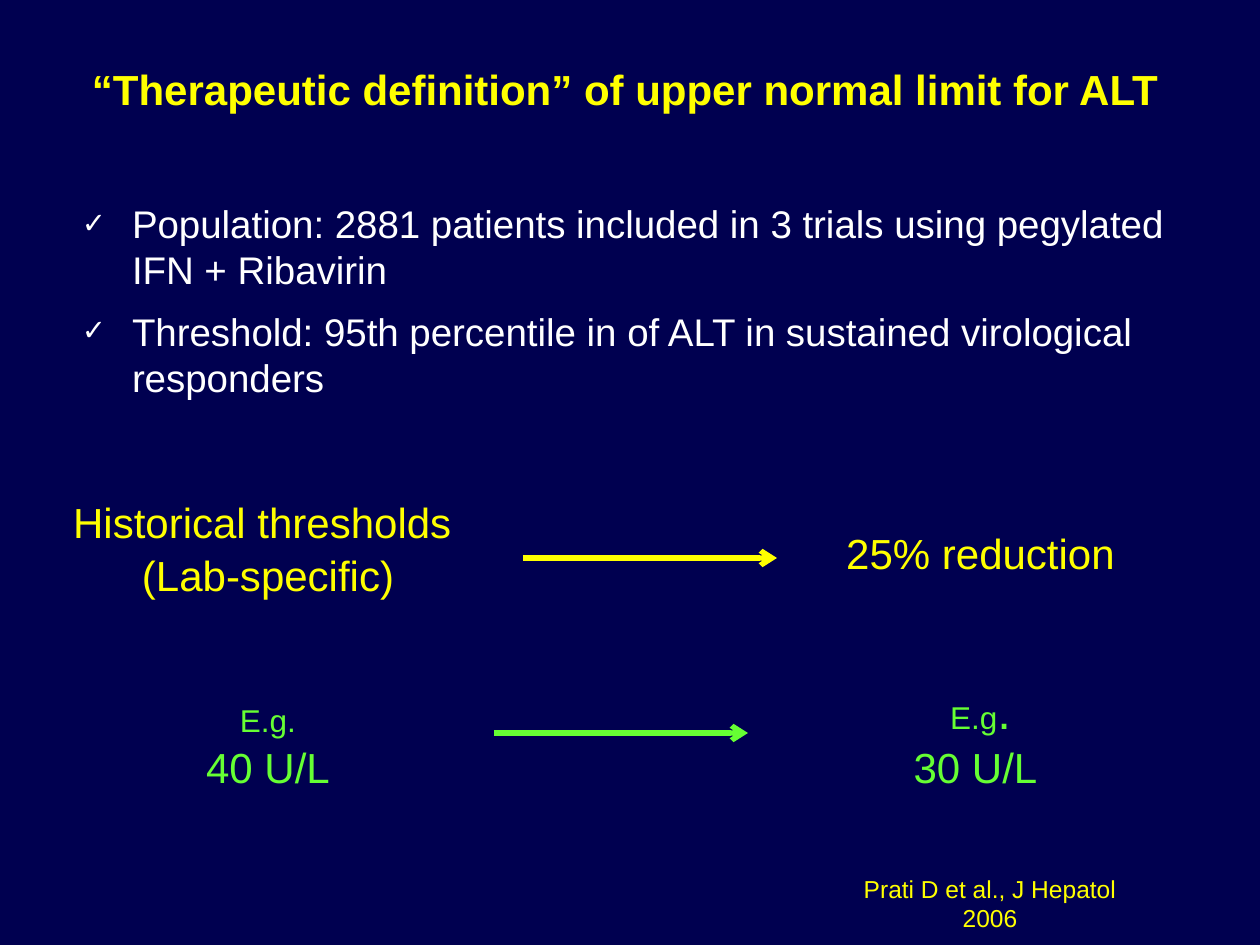
from pptx import Presentation
from pptx import util as u
from pptx.dml.color import RGBColor
from pptx.enum import shapes, text
from pptx.oxml.ns import qn
from lxml import etree

NAVY = RGBColor(0x00, 0x00, 0x50)
YELLOW = RGBColor(0xFF, 0xFF, 0x00)
GREEN = RGBColor(0x66, 0xFF, 0x33)
WHITE = RGBColor(0xFF, 0xFF, 0xFF)
CENTER = text.PP_ALIGN.CENTER
PX_PER_INCH = 126


def px(length):
    """Convert whole pixels to EMU."""
    return u.Emu(round(length * 914400 / PX_PER_INCH))


def place(shape, box):
    """Move a shape to a box of left, top, width and height."""
    shape.left, shape.top, shape.width, shape.height = map(px, box)


def prepare_frame(shape, side=13, anchor=text.MSO_ANCHOR.TOP):
    """Set wrapping, insets and anchor, and return the text frame."""
    frame = shape.text_frame
    frame.word_wrap = True
    frame.auto_size = text.MSO_AUTO_SIZE.NONE
    frame.vertical_anchor = anchor
    frame.margin_left = frame.margin_right = px(side)
    frame.margin_top = frame.margin_bottom = px(6)
    return frame


def add_run(paragraph, words, size, color, bold=False):
    """Append a formatted run."""
    run = paragraph.add_run()
    run.text = words
    font = run.font
    font.name, font.size, font.bold = "Arial", u.Pt(size), bold
    font.color.rgb = color


def write(frame, words, size=24, color=YELLOW, bold=False, align=CENTER,
          spacing=1.0, before=0, after=0):
    """Write one paragraph, filling the first empty one if there is one."""
    first = frame.paragraphs[0]
    paragraph = frame.add_paragraph() if first.runs else first
    paragraph.alignment = align
    paragraph.line_spacing = spacing
    paragraph.space_before, paragraph.space_after = u.Pt(before), u.Pt(after)
    add_run(paragraph, words, size, color, bold)
    return paragraph


def set_check_bullet(paragraph, indent):
    """Give a paragraph a hanging white check mark."""
    properties = paragraph._p.get_or_add_pPr()
    properties.set("marL", str(px(indent)))
    properties.set("indent", str(-px(indent)))
    color = etree.SubElement(properties, qn("a:buClr"))
    etree.SubElement(color, qn("a:srgbClr"), val=str(WHITE))
    etree.SubElement(properties, qn("a:buSzPct"), val="75000")
    etree.SubElement(properties, qn("a:buFont"), typeface="Arial")
    etree.SubElement(properties, qn("a:buChar"), char="✓")


def fill_title(slide, box):
    """Fill the title placeholder."""
    title = slide.shapes.title
    place(title, box)
    frame = prepare_frame(title, side=14, anchor=text.MSO_ANCHOR.MIDDLE)
    write(frame, "“Therapeutic definition” of upper normal limit for ALT ",
          bold=True, spacing=0.85)


def fill_study_points(slide, box):
    """Fill the body placeholder with the check list."""
    body = slide.placeholders[1]
    place(body, box)
    frame = prepare_frame(body, side=14)
    for point in (
        "Population: 2881 patients included in 3 trials using pegylated IFN + Ribavirin",
        "Threshold: 95th percentile in of ALT in sustained virological responders",
    ):
        paragraph = write(frame, point, size=22, color=WHITE,
                          align=text.PP_ALIGN.LEFT, before=4.4, after=4.4)
        set_check_bullet(paragraph, 50)


def add_threshold(slide, box, headings, dot, value):
    """Add a column of yellow headings above a green example."""
    frame = prepare_frame(slide.shapes.add_textbox(*map(px, box)))
    for heading in headings:
        write(frame, heading, spacing=1.05)
    example, dot_size = "E.g", 28 if dot == "large" else 18
    paragraph = write(frame, example, size=18, color=GREEN, spacing=1.05, before=57)
    add_run(paragraph, ".", dot_size, GREEN)
    write(frame, value, color=GREEN, spacing=1.05)


def add_arrow(slide, left, top, length, color):
    """Add a horizontal arrow pointing right."""
    arrow = slide.shapes.add_connector(
        shapes.MSO_CONNECTOR.STRAIGHT, px(left), px(top), px(left + length), px(top))
    arrow.line.color.rgb = color
    arrow.line.width = u.Pt(3)
    etree.SubElement(arrow.line._get_or_add_ln(), qn("a:tailEnd"), type="arrow")
    etree.SubElement(arrow._element.spPr, qn("a:effectLst"))


def add_citation(slide, box):
    """Add the reference at the foot of the slide."""
    frame = prepare_frame(slide.shapes.add_textbox(*map(px, box)))
    write(frame, "Prati D et al., J Hepatol 2006", size=14)


def main():
    """Build and save the slide."""
    presentation = Presentation()
    presentation.slide_width, presentation.slide_height = px(1260), px(945)
    slide = presentation.slides.add_slide(presentation.slide_layouts[1])
    slide.background.fill.solid()
    slide.background.fill.fore_color.rgb = NAVY
    fill_title(slide, (38, 14, 1186, 158))
    fill_study_points(slide, (68, 194, 1150, 567))
    add_threshold(slide, (58, 488, 420, 305),
                  ("Historical thresholds ", "(Lab-specific)"), "small", "40 U/L")
    add_arrow(slide, 523, 558, 254, YELLOW)
    add_threshold(slide, (832, 519, 297, 275), ("25% reduction",), "large", "30 U/L ")
    add_arrow(slide, 494, 733, 254, GREEN)
    add_citation(slide, (830, 868, 320, 70))
    presentation.save("out.pptx")


if __name__ == "__main__":
    main()
